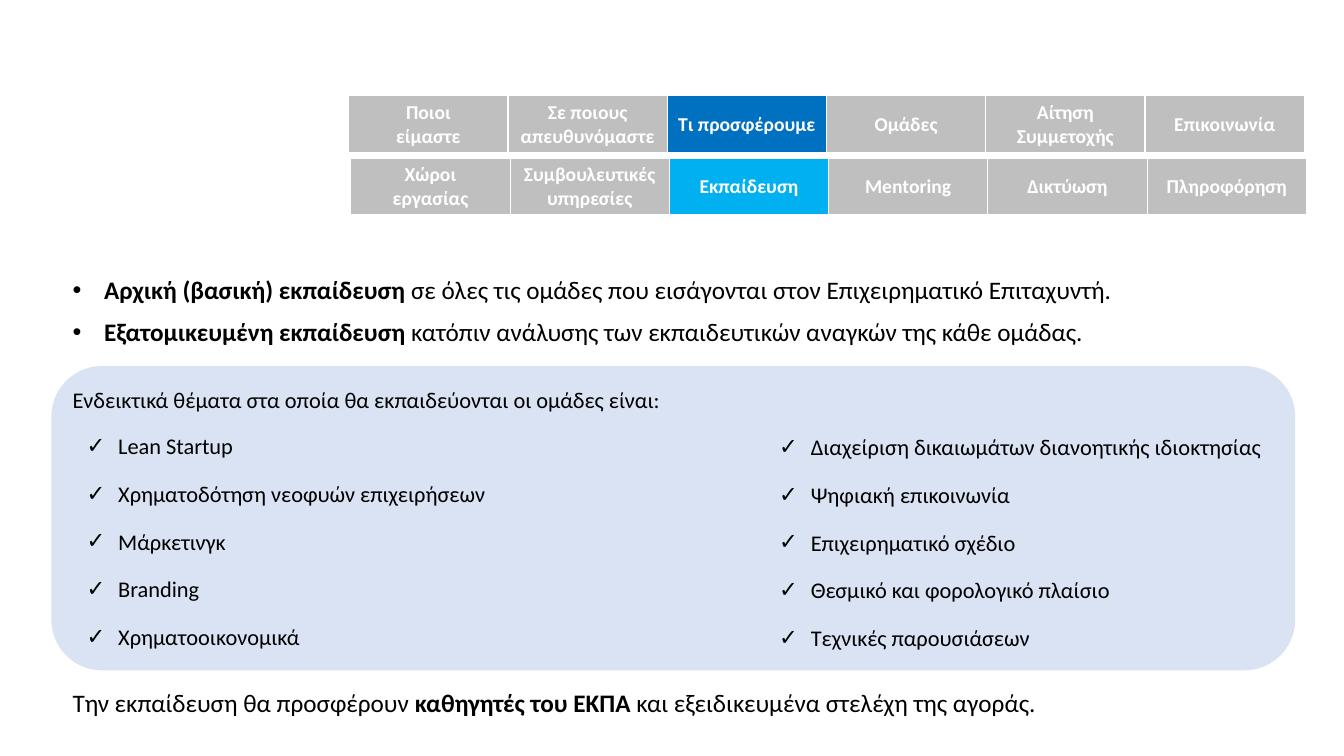
from dataclasses import dataclass

from lxml import etree
from pptx import Presentation
from pptx.dml.color import RGBColor
from pptx.enum import shapes, text
from pptx.oxml import ns
from pptx.slide import Slide
from pptx.util import Pt


@dataclass(frozen=True)
class Theme:
    font: str = "Calibri"
    ink: str = "000000"
    white: str = "FFFFFF"
    panel: str = "DAE3F3"
    tab: str = "BFBFBF"
    section: str = "0070C0"
    subsection: str = "00B0F0"
    body_size: float = 18
    list_size: float = 16
    tab_size: float = 14
    line_spacing: float = 1.15
    indent: float = 22.5


def add_xml(parent, tag, **attributes):
    return etree.SubElement(parent, ns.qn(tag), attributes)


@dataclass
class SlideBuilder:
    slide: Slide
    theme: Theme

    def set_font(self, paragraph, size, color, bold=None):
        font = paragraph.font
        font.name = self.theme.font
        font.size = Pt(size)
        font.color.rgb = RGBColor.from_string(color)
        font.bold = bold

    def panel(self, left, top, width, height):
        """Add the rounded background behind everything else."""
        shape = self.slide.shapes.add_shape(
            shapes.MSO_SHAPE.ROUNDED_RECTANGLE,
            Pt(left), Pt(top), Pt(width), Pt(height))
        shape.shadow.inherit = False
        shape.fill.solid()
        shape.fill.fore_color.rgb = RGBColor.from_string(self.theme.panel)
        shape.line.fill.background()
        self.slide.shapes._spTree.insert(2, shape._element)

    def navigation(self, left, top, labels, active, active_color):
        """Add a one-row table of tabs with one of them highlighted."""
        column_width, height = 113.76, 41
        frame = self.slide.shapes.add_table(
            1, len(labels), Pt(left), Pt(top),
            Pt(column_width * len(labels)), Pt(height))
        table = frame.table
        table.first_row = table.horz_banding = False
        table.rows[0].height = Pt(height)
        for index, label in enumerate(labels):
            table.columns[index].width = Pt(column_width)
            cell = table.cell(0, index)
            cell.text = label
            cell.vertical_anchor = text.MSO_ANCHOR.MIDDLE
            for paragraph in cell.text_frame.paragraphs:
                paragraph.alignment = text.PP_ALIGN.CENTER
                self.set_font(paragraph, self.theme.tab_size, self.theme.white, True)
            self.borders(cell)
            cell.fill.solid()
            cell.fill.fore_color.rgb = RGBColor.from_string(
                active_color if index == active else self.theme.tab)

    def borders(self, cell):
        properties = cell._tc.get_or_add_tcPr()
        for side, width in (("L", 1), ("R", 1), ("T", 1), ("B", 3)):
            line = add_xml(properties, f"a:ln{side}", w=str(Pt(width)))
            add_xml(add_xml(line, "a:solidFill"), "a:srgbClr", val=self.theme.white)

    def body(self, placeholder_index, left, top, width, height):
        """Place a body placeholder and return its text frame."""
        shape = self.slide.placeholders[placeholder_index]
        shape.left, shape.top = Pt(left), Pt(top)
        shape.width, shape.height = Pt(width), Pt(height)
        frame = shape.text_frame
        frame.word_wrap = True
        frame.auto_size = text.MSO_AUTO_SIZE.NONE
        frame.vertical_anchor = text.MSO_ANCHOR.TOP
        return frame

    def paragraph(self, frame, runs, size, after, before=0, bullet=None):
        """Append a paragraph made of (wording, bold) runs."""
        first = frame.paragraphs[0]
        paragraph = frame.add_paragraph() if first.runs else first
        properties = paragraph._p.get_or_add_pPr()
        indent = Pt(self.theme.indent) if bullet else 0
        properties.set("marL", str(indent))
        properties.set("indent", str(-indent))
        if bullet:
            add_xml(properties, "a:buFont", typeface="Arial")
            add_xml(properties, "a:buChar", char=bullet)
        else:
            add_xml(properties, "a:buNone")
        paragraph.alignment = text.PP_ALIGN.JUSTIFY
        paragraph.line_spacing = self.theme.line_spacing
        paragraph.space_before = Pt(before)
        paragraph.space_after = Pt(after)
        self.set_font(paragraph, size, self.theme.ink)
        for wording, bold in runs:
            run = paragraph.add_run()
            run.text = wording
            run.font.bold = bold

    def checklist(self, placeholder_index, left, top, width, height, items):
        frame = self.body(placeholder_index, left, top, width, height)
        for item in items:
            self.paragraph(frame, [(item, False)], self.theme.list_size,
                           after=12, bullet="✓")


SECTIONS = ["Ποιοι\nείμαστε", "Σε ποιους απευθυνόμαστε", "Τι προσφέρουμε",
            "Ομάδες", "Αίτηση Συμμετοχής", "Επικοινωνία"]
SERVICES = ["Χώροι\nεργασίας", "Συμβουλευτικές υπηρεσίες", "Εκπαίδευση",
            "Mentoring", "Δικτύωση", "Πληροφόρηση"]
TRAINING = [
    ("Αρχική (βασική) εκπαίδευση ",
     "σε όλες τις ομάδες που εισάγονται στον Επιχειρηματικό Επιταχυντή."),
    ("Εξατομικευμένη εκπαίδευση ",
     "κατόπιν ανάλυσης των εκπαιδευτικών αναγκών της κάθε ομάδας."),
]
TOPICS_LEFT = ["Lean Startup", "Χρηματοδότηση νεοφυών επιχειρήσεων",
               "Μάρκετινγκ", "Branding", "Χρηματοοικονομικά"]
TOPICS_RIGHT = ["Διαχείριση δικαιωμάτων διανοητικής ιδιοκτησίας",
                "Ψηφιακή επικοινωνία", "Επιχειρηματικό σχέδιο",
                "Θεσμικό και φορολογικό πλαίσιο", "Τεχνικές παρουσιάσεων"]


def main():
    presentation = Presentation()
    presentation.slide_width, presentation.slide_height = Pt(960), Pt(540)
    comparison_layout = presentation.slide_layouts[4]
    slide = presentation.slides.add_slide(comparison_layout)
    title = slide.shapes.title._element
    title.getparent().remove(title)

    theme = Theme()
    builder = SlideBuilder(slide, theme)
    builder.panel(36.7, 261.4, 888.5, 217.4)
    builder.navigation(249.1, 68.4, SECTIONS, 2, theme.section)
    builder.navigation(250.6, 113, SERVICES, 2, theme.subsection)

    training = builder.body(1, 44.6, 189.4, 881.3, 110.2)
    for lead, rest in TRAINING:
        builder.paragraph(training, [(lead, True), (rest, False)],
                          theme.body_size, after=5, bullet="•")
    builder.paragraph(
        training,
        [("Ενδεικτικά θέματα στα οποία θα εκπαιδεύονται οι ομάδες είναι:", False)],
        theme.list_size, after=5, before=20.4)

    builder.checklist(2, 54.7, 302.4, 454.3, 165.6, TOPICS_LEFT)
    builder.checklist(4, 549.4, 303.1, 375.8, 165.6, TOPICS_RIGHT)

    closing = builder.body(3, 44.6, 483.8, 881.3, 31)
    builder.paragraph(
        closing,
        [("Την εκπαίδευση θα προσφέρουν ", False), ("καθηγητές του ΕΚΠΑ ", True),
         ("και εξειδικευμένα στελέχη της αγοράς.", False)],
        theme.body_size, after=5)
    presentation.save("out.pptx")


if __name__ == "__main__":
    main()
